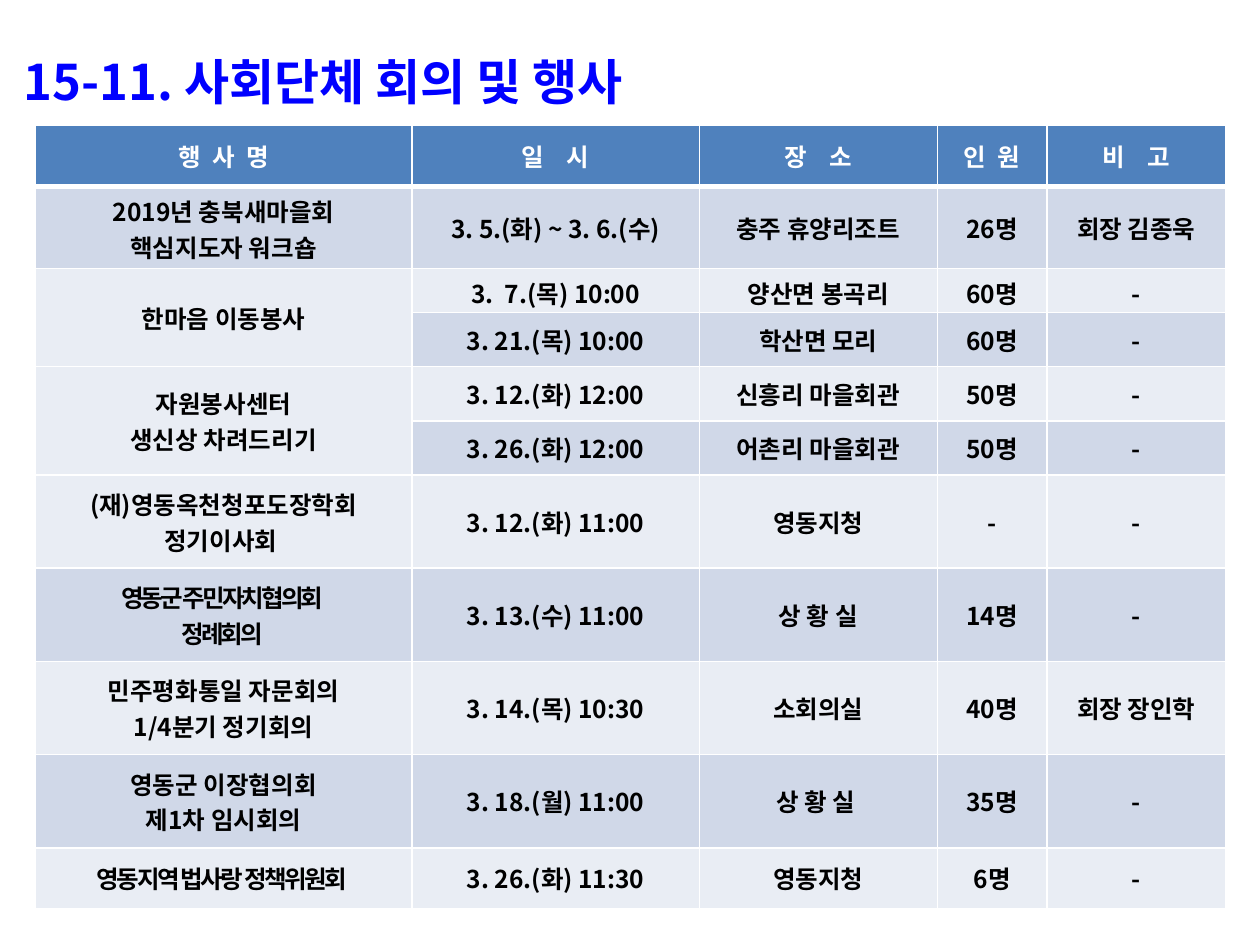
import pptx
import pptx.dml.color
import pptx.enum.text
import pptx.oxml
import pptx.oxml.ns
import pptx.util
import lxml.etree

Inches = pptx.util.Inches
Pt = pptx.util.Pt
KOREAN_FONT = "Noto Sans CJK KR"


def color(hex_value):
    return pptx.dml.color.RGBColor.from_string(hex_value)


def add_text(paragraph, text, font_format, spacing=0):
    """Add a formatted run; spacing is the letter spacing in points."""
    run = paragraph.add_run()
    run.text = text
    values = dict(font_format)
    run.font.color.rgb = color(values.pop("color"))
    for name, value in values.items():
        setattr(run.font, name, value)
    properties = run._r.get_or_add_rPr()
    east_asian = lxml.etree.SubElement(properties, pptx.oxml.ns.qn("a:ea"))
    east_asian.set("typeface", KOREAN_FONT)
    if spacing:
        properties.set("spc", str(round(spacing * 100)))


title_format = {"name": KOREAN_FONT, "size": Pt(28), "bold": True, "color": "0000FF"}
header_format = {"name": "Arial", "size": Pt(14), "bold": True, "color": "FFFFFF"}
body_format = {"name": KOREAN_FONT, "size": Pt(14), "bold": True, "color": "000000"}

presentation = pptx.Presentation()
presentation.slide_width = Inches(10)
presentation.slide_height = Inches(7.5)
slide = presentation.slides.add_slide(presentation.slide_layouts[6])

# Title
title = slide.shapes.add_textbox(Inches(0), Inches(0.13), Inches(10), Inches(7.01))
title.text_frame.word_wrap = True
title_paragraph = title.text_frame.paragraphs[0]
title_paragraph.line_spacing = 1.5
add_text(title_paragraph, " 15-11. 사회단체 회의 및 행사", title_format)

# Event table: None continues the merged cell above
rows = [
    ["행  사  명", "일    시", "장    소", "인  원", "비    고"],
    ["2019년 충북새마을회\n핵심지도자 워크숍", "3. 5.(화) ~ 3. 6.(수)", "충주 휴양리조트", "26명", "회장 김종욱"],
    ["한마음 이동봉사", "3.  7.(목) 10:00", "양산면 봉곡리", "60명", "-"],
    [None, "3. 21.(목) 10:00", "학산면 모리", "60명", "-"],
    ["자원봉사센터\n생신상 차려드리기", "3. 12.(화) 12:00", "신흥리 마을회관", "50명", "-"],
    [None, "3. 26.(화) 12:00", "어촌리 마을회관", "50명", "-"],
    ["(재)영동옥천청포도장학회\n정기이사회 ", "3. 12.(화) 11:00", "영동지청", "-", "-"],
    ["영동군 주민자치협의회 \n정례회의 ", "3. 13.(수) 11:00", "상 황 실", "14명", "-"],
    ["민주평화통일 자문회의\n1/4분기 정기회의", "3. 14.(목) 10:30", "소회의실", "40명", "회장 장인학"],
    ["영동군 이장협의회\n제1차 임시회의", "3. 18.(월) 11:00", "상 황 실 ", "35명", "-"],
    ["영동지역 법사랑 정책위원회 ", "3. 26.(화) 11:30", "영동지청", "6명", "-"],
]
column_widths = [2.99, 2.28, 1.89, 0.87, 1.42]
row_heights = [0.49, 0.65, 0.35, 0.43, 0.43, 0.43, 0.74, 0.74, 0.74, 0.74, 0.48]
row_fills = ["4F81BD", "D0D8E8", "E9EDF4", "D0D8E8", "E9EDF4", "D0D8E8",
             "E9EDF4", "D0D8E8", "E9EDF4", "D0D8E8", "E9EDF4"]
name_spacing = {7: -1.7, 10: -1.4}

table = slide.shapes.add_table(
    len(rows), len(column_widths), Inches(0.28), Inches(0.99), Inches(9.45), Inches(6.22)
).table
for column, width in zip(table.columns, column_widths):
    column.width = Inches(width)
for row, height in zip(table.rows, row_heights):
    row.height = Inches(height)

for row_index, texts in enumerate(rows):
    for column_index, text in enumerate(texts):
        cell = table.cell(row_index, column_index)
        cell.vertical_anchor = pptx.enum.text.MSO_ANCHOR.MIDDLE
        cell.fill.solid()
        cell.fill.fore_color.rgb = color(row_fills[row_index])

        # White borders, thicker under the header
        border_widths = {
            "lnL": 1,
            "lnR": 1,
            "lnT": 3 if row_index == 1 else 1,
            "lnB": 3 if row_index == 0 else 1,
        }
        cell_properties = cell._tc.get_or_add_tcPr()
        for position, (side, width) in enumerate(border_widths.items()):
            border = pptx.oxml.parse_xml(
                f'<a:{side} {pptx.oxml.ns.nsdecls("a")} w="{int(Pt(width))}">'
                f'<a:solidFill><a:srgbClr val="FFFFFF"/></a:solidFill></a:{side}>'
            )
            cell_properties.insert(position, border)

        if text is None:
            table.cell(row_index - 1, column_index).merge(cell)
            continue
        spacing = name_spacing.get(row_index, 0) if column_index == 0 else 0
        for line_index, line in enumerate(text.split("\n")):
            frame = cell.text_frame
            paragraph = frame.add_paragraph() if line_index else frame.paragraphs[0]
            paragraph.alignment = pptx.enum.text.PP_ALIGN.CENTER
            add_text(paragraph, line, body_format if row_index else header_format, spacing)

presentation.save("out.pptx")
